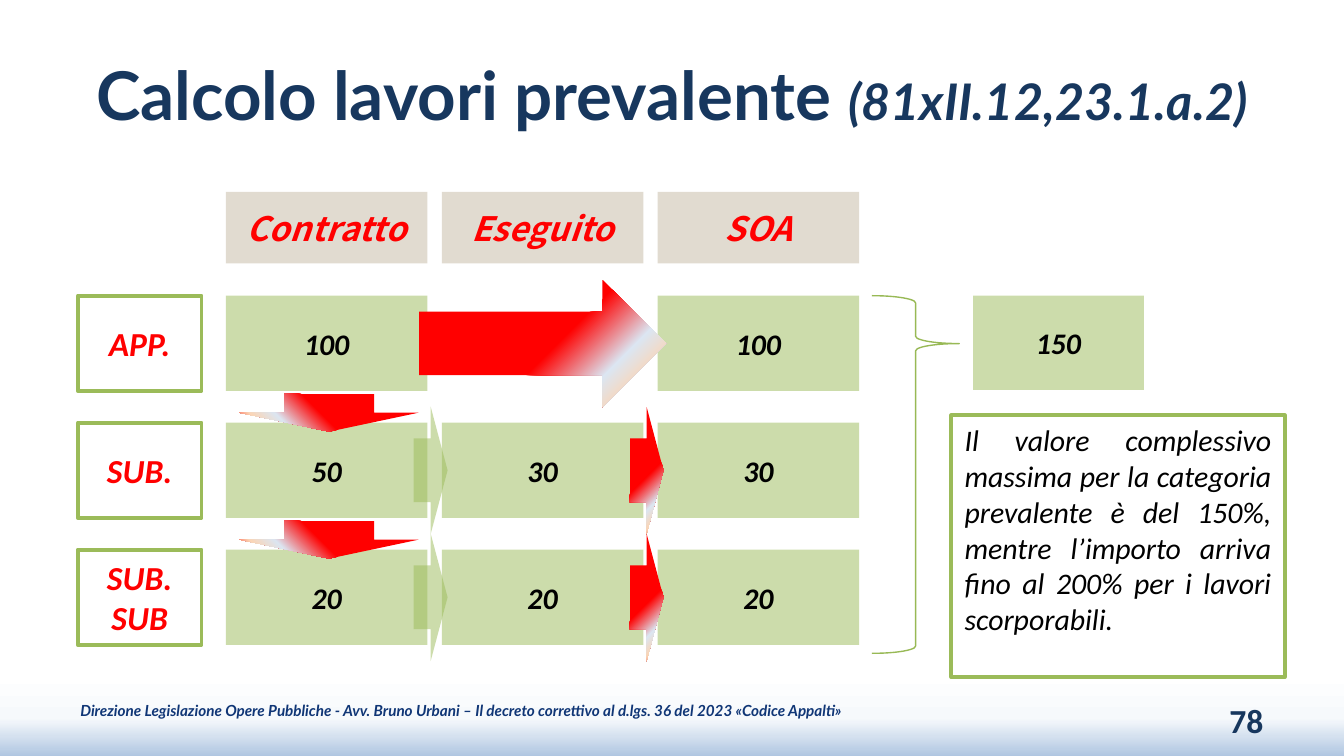
import pptx
import pptx.util
import pptx.dml.color
import pptx.enum.shapes
import pptx.enum.text
import pptx.oxml.ns
from dataclasses import dataclass
from lxml import etree

Cm = pptx.util.Cm
Shapes = pptx.enum.shapes.MSO_SHAPE
Align = pptx.enum.text.PP_ALIGN
Anchor = pptx.enum.text.MSO_ANCHOR
qn = pptx.oxml.ns.qn


@dataclass(frozen=True)
class Theme:
    navy: str = "17375E"
    footer: str = "103676"
    red: str = "FF0000"
    black: str = "000000"
    white: str = "FFFFFF"
    sand: str = "E1DBD0"
    green: str = "9BBB59"
    brace: str = "98B955"
    flow: tuple = ((54, "FF0000"), (75, "DCE6F2"), (87, "FCD5B5"), (100, "FF0000"))
    background: tuple = ((89, "FFFFFF"), (95, "F6F9FC"), (100, "B0C6E1"), (100, "CAD9EB"))
    heading_font: str = "Lato"
    body_font: str = "Calibri"
    column_font: str = "Noto Sans CJK JP"
    title_size: float = 36
    reference_size: float = 27
    label_size: float = 18
    body_size: float = 16
    footer_size: float = 8.2


@dataclass(frozen=True)
class Box:
    left: float
    top: float
    width: float
    height: float

    def lengths(self):
        return Cm(self.left), Cm(self.top), Cm(self.width), Cm(self.height)


THEME = Theme()


def rgb(color):
    return pptx.dml.color.RGBColor.from_string(color)


def set_gradient(fill, element, stops, angle):
    fill.gradient()
    gradient = element.xpath(".//a:gradFill")[0]
    gradient.clear()
    gradient.set("rotWithShape", "1")
    stop_list = etree.SubElement(gradient, qn("a:gsLst"))
    for position, color in stops:
        stop = etree.SubElement(stop_list, qn("a:gs"), pos=str(position * 1000))
        etree.SubElement(stop, qn("a:srgbClr"), val=color)
    etree.SubElement(gradient, qn("a:lin"), ang=str(angle * 60000), scaled="0")


def add_text(shape, text, size=THEME.body_size, color=THEME.black, font=THEME.body_font,
             bold=True, italic=True, align=Align.CENTER, anchor=Anchor.MIDDLE):
    frame = shape.text_frame
    frame.word_wrap = True
    frame.auto_size = pptx.enum.text.MSO_AUTO_SIZE.NONE
    frame.vertical_anchor = anchor
    paragraph = frame.paragraphs[0]
    paragraph.alignment = align
    run = paragraph.add_run()
    run.text = text
    run.font.size = pptx.util.Pt(size)
    run.font.name = font
    run.font.bold = bold
    run.font.italic = italic
    run.font.color.rgb = rgb(color)


def add_block(slide, box, kind=Shapes.RECTANGLE, fill=None, opacity=100, line=None, line_width=2):
    shape = slide.shapes.add_shape(kind, *box.lengths())
    shape.shadow.inherit = False
    if fill:
        shape.fill.solid()
        shape.fill.fore_color.rgb = rgb(fill)
        if opacity < 100:
            color = shape.element.xpath("./p:spPr/a:solidFill/a:srgbClr")[0]
            etree.SubElement(color, qn("a:alpha"), val=str(opacity * 1000))
    else:
        shape.fill.background()
    if line:
        shape.line.color.rgb = rgb(line)
        shape.line.width = pptx.util.Pt(line_width)
    else:
        shape.line.fill.background()
    return shape


def add_value(slide, box, text):
    add_text(add_block(slide, box, fill=THEME.green, opacity=50), text)


def add_flow_arrow(slide, box, rotation=0, translucent=False):
    shape = add_block(slide, box, Shapes.DOWN_ARROW, THEME.green, 50)
    shape.rotation = rotation
    if not translucent:
        set_gradient(shape.fill, shape.element, THEME.flow, 135)


def add_right_arrow(slide, center_x, center_y, length, translucent=False):
    thickness = 2.41
    box = Box(center_x - thickness / 2, center_y - length / 2, thickness, length)
    add_flow_arrow(slide, box, 270, translucent)


def place_title(slide, box):
    title = slide.shapes.title
    title.left, title.top, title.width, title.height = box.lengths()
    style = dict(color=THEME.navy, font=THEME.heading_font)
    add_text(title, "Calcolo lavori prevalente ", size=THEME.title_size, italic=False, **style)
    add_text(title, "(81xII.12,23.1.a.2)", size=THEME.reference_size, **style)


def place_matrix(slide, box):
    columns = ("Contratto", "Eseguito", "SOA")
    rows = (("APP.", ("100", None, "100")),
            ("SUB.", ("50", "30", "30")),
            ("SUB. SUB", ("20", "20", "20")))
    label_width, header_height = 2.34, 1.35
    cell_width, cell_height, column_gap, row_gap = 3.81, 1.8, 0.27, 0.6
    first_left = box.left + box.width - 3 * cell_width - 2 * column_gap
    first_top = box.top + box.height - 3 * cell_height - 2 * row_gap
    lefts = [first_left + index * (cell_width + column_gap) for index in range(3)]
    tops = [first_top + index * (cell_height + row_gap) for index in range(3)]

    for left, name in zip(lefts, columns):
        header = add_block(slide, Box(left, box.top, cell_width, header_height), fill=THEME.sand)
        add_text(header, name, size=THEME.label_size, color=THEME.red, font=THEME.column_font)

    for top, (name, values) in zip(tops, rows):
        label = add_block(slide, Box(box.left, top, label_width, cell_height),
                          fill=THEME.white, line=THEME.green)
        add_text(label, name, size=THEME.label_size, color=THEME.red)
        for left, value in zip(lefts, values):
            if value:
                add_value(slide, Box(left, top, cell_width, cell_height), value)

    add_right_arrow(slide, lefts[1] + cell_width / 2, tops[0] + cell_height / 2, 4.67)
    for top in tops[1:]:
        middle = top + cell_height / 2
        add_right_arrow(slide, lefts[1] - 0.21, middle, 0.64, translucent=True)
        add_right_arrow(slide, lefts[2] - 0.21, middle, 0.64)
        add_flow_arrow(slide, Box(lefts[0] + 0.25, top - 0.55, 3.4, 0.72))


def place_total(slide, box):
    brace = add_block(slide, Box(box.left, box.top, 1.65, box.height - 0.45),
                      Shapes.RIGHT_BRACE, line=THEME.brace, line_width=0.75)
    brace.adjustments[0] = 0.083
    brace.adjustments[1] = 0.134
    add_value(slide, Box(box.left + 1.91, box.top, 3.23, 1.78), "150")
    note = add_block(slide, Box(box.left + 1.5, box.top + 2.26, box.width - 1.5, box.height - 2.26),
                     fill=THEME.white, line=THEME.green)
    add_text(note, "Il valore complessivo massima per la categoria prevalente è del 150%, "
             "mentre l’importo arriva fino al 200% per i lavori scorporabili.",
             bold=False, align=Align.JUSTIFY, anchor=Anchor.TOP)


def place_footer(slide, box):
    credit = slide.shapes.add_textbox(*Box(box.left, box.top, 16.94, 0.76).lengths())
    add_text(credit, "Direzione Legislazione Opere Pubbliche - Avv. Bruno Urbani – "
             "Il decreto correttivo al d.lgs. 36 del 2023 «Codice Appalti»",
             size=THEME.footer_size, color=THEME.footer, font=THEME.heading_font,
             align=Align.LEFT, anchor=Anchor.TOP)
    number_box = Box(box.left + box.width - 5.92, box.top + 0.1, 5.92, 0.76)
    number = slide.shapes.add_textbox(*number_box.lengths())
    add_text(number, "78", size=THEME.label_size, color=THEME.navy, italic=False, align=Align.RIGHT)


def main():
    presentation = pptx.Presentation()
    presentation.slide_width = Cm(25.4)
    presentation.slide_height = Cm(14.29)
    slide = presentation.slides.add_slide(presentation.slide_layouts[5])
    set_gradient(slide.background.fill, slide.element, THEME.background, 90)
    place_title(slide, Box(1.27, 0.58, 22.86, 2.39))
    place_matrix(slide, Box(1.47, 3.63, 14.77, 8.56))
    place_total(slide, Box(16.48, 5.59, 7.8, 7.21))
    place_footer(slide, Box(1.27, 13.13, 22.86, 0.86))
    presentation.save("out.pptx")


if __name__ == "__main__":
    main()
